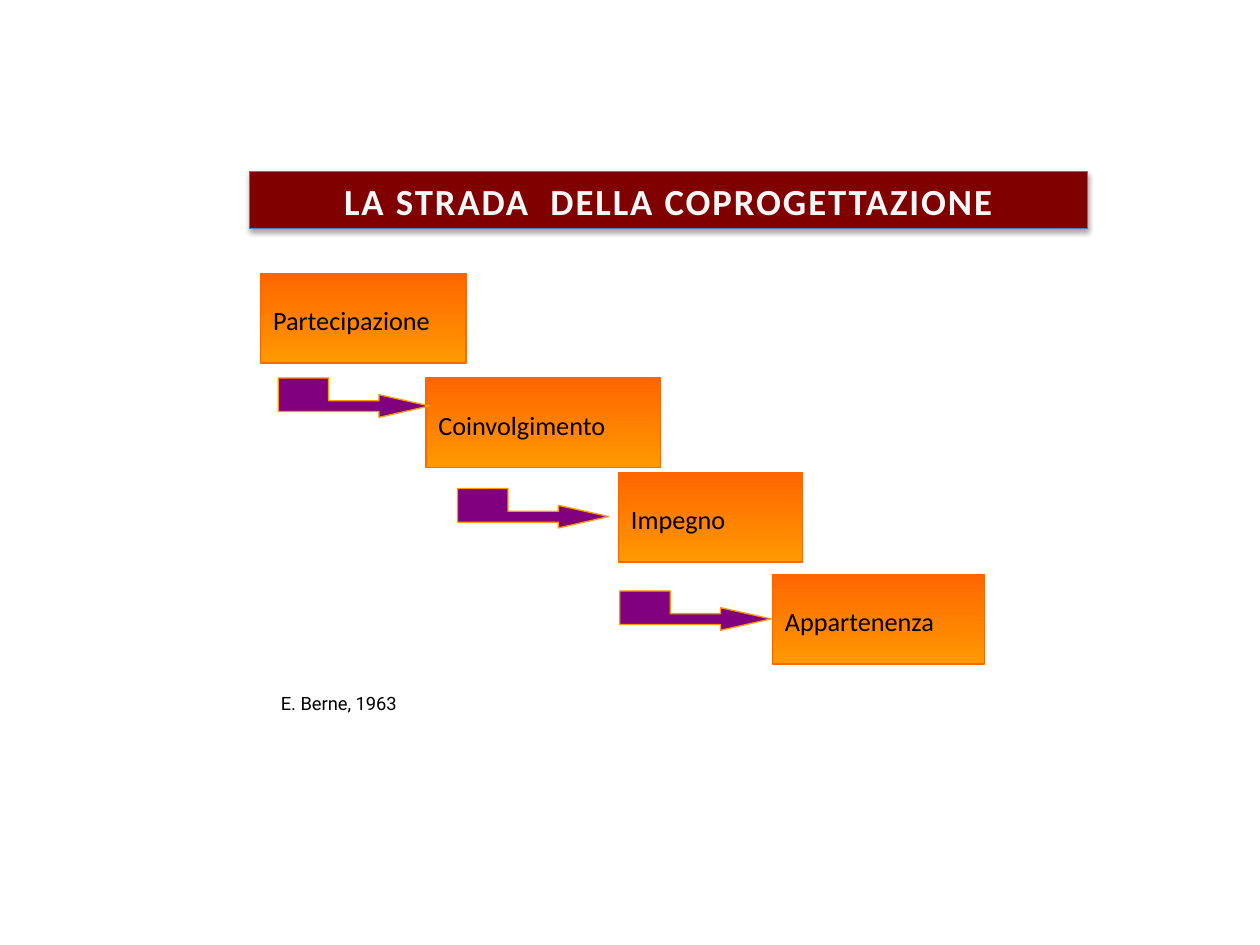
from lxml import etree
from pptx import Presentation
from pptx.dml.color import RGBColor
from pptx.enum.shapes import MSO_SHAPE as Shape
from pptx.enum.text import MSO_ANCHOR as Anchor, PP_ALIGN as Align
from pptx.oxml.ns import qn
from pptx.util import Pt

STEP_HEIGHT = 51.1
# Label, left, top, width
STEPS = [
    ("Partecipazione", 149, 156.3, 117.4),
    ("Coinvolgimento", 243.4, 216, 133.9),
    ("Impegno", 353.5, 270, 105.1),
    ("Appartenenza", 441.4, 328.3, 121),
]
ARROW_ORIGINS = [(159, 216), (261.5, 279.2), (354.2, 337.7)]
# Tail block, shaft and arrowhead, relative to the top left corner
ARROW_OUTLINE = [
    (0, 0), (28.8, 0), (28.8, 13), (57.6, 13), (57.6, 9.6),
    (86.4, 16), (57.6, 22.5), (57.6, 19.2), (0, 19.2),
]


def color(value):
    return RGBColor.from_string(value)


def write(box, text, size, font="Calibri", ink="000000", bold=False,
          align=Align.LEFT, spacing=None, top_inset=3.6):
    frame = box.text_frame
    frame.word_wrap = True
    frame.vertical_anchor = Anchor.MIDDLE
    frame.margin_left = frame.margin_right = Pt(7.2)
    frame.margin_top, frame.margin_bottom = Pt(top_inset), Pt(3.6)
    para = frame.paragraphs[0]
    para.alignment = align
    span = para.add_run()
    span.text = text
    span.font.size, span.font.name, span.font.bold = Pt(size), font, bold
    span.font.color.rgb = color(ink)
    if spacing:
        span.font._element.set("spc", str(round(spacing * 100)))


def outline(shape, ink):
    shape.shadow.inherit = False
    shape.line.color.rgb = color(ink)
    shape.line.width = Pt(0.75)


def add_rectangle(page, left, top, width, height, ink):
    box = page.shapes.add_shape(Shape.RECTANGLE, Pt(left), Pt(top), Pt(width), Pt(height))
    outline(box, ink)
    return box


def add_step(page, label, left, top, width):
    box = add_rectangle(page, left, top, width, STEP_HEIGHT, "FF6600")
    box.fill.gradient()
    box.fill.gradient_angle = 270
    for stop, ink in zip(box.fill.gradient_stops, ("FF6600", "FF9900")):
        stop.color.rgb = color(ink)
    write(box, label, 15, top_inset=6)


def add_arrow(page, left, top):
    points = [(Pt(left + x), Pt(top + y)) for x, y in ARROW_OUTLINE]
    builder = page.shapes.build_freeform(*points[0])
    builder.add_line_segments(points[1:], close=True)
    arrow = builder.convert_to_shape()
    arrow.fill.solid()
    arrow.fill.fore_color.rgb = color("800080")
    outline(arrow, "FF9900")


def add_soft_shadow(shape):
    effects = shape._element.spPr.find(qn("a:effectLst"))
    shadow = etree.SubElement(effects, qn("a:outerShdw"), blurRad=str(Pt(3.1)),
                              dist=str(Pt(1.8)), dir="5400000", rotWithShape="0")
    ink = etree.SubElement(shadow, qn("a:srgbClr"), val="000000")
    etree.SubElement(ink, qn("a:alpha"), val="35000")


def add_title(page, left, top, width, height):
    banner = add_rectangle(page, left, top, width, height, "4B7EBC")
    banner.fill.solid()
    banner.fill.fore_color.rgb = color("800000")
    add_soft_shadow(banner)
    write(banner, "LA STRADA  DELLA COPROGETTAZIONE", 21, ink="F8F8F8",
          bold=True, align=Align.CENTER, spacing=1.1)


def add_citation(page, left, top, width, height):
    box = page.shapes.add_textbox(Pt(left), Pt(top), Pt(width), Pt(height))
    write(box, "E. Berne, 1963", 10.5, font="Roboto")


def main():
    deck = Presentation()
    deck.slide_width, deck.slide_height = Pt(720), Pt(540)
    page = deck.slides.add_slide(deck.slide_layouts[6])

    # Staircase of steps
    for step in STEPS:
        add_step(page, *step)
    add_citation(page, 153.4, 391.7, 162, 20)

    # Arrows leading from one step to the next
    for origin in ARROW_ORIGINS:
        add_arrow(page, *origin)
    add_title(page, 142.6, 98.2, 478.8, 32.6)

    deck.save("out.pptx")


if __name__ == "__main__":
    main()
